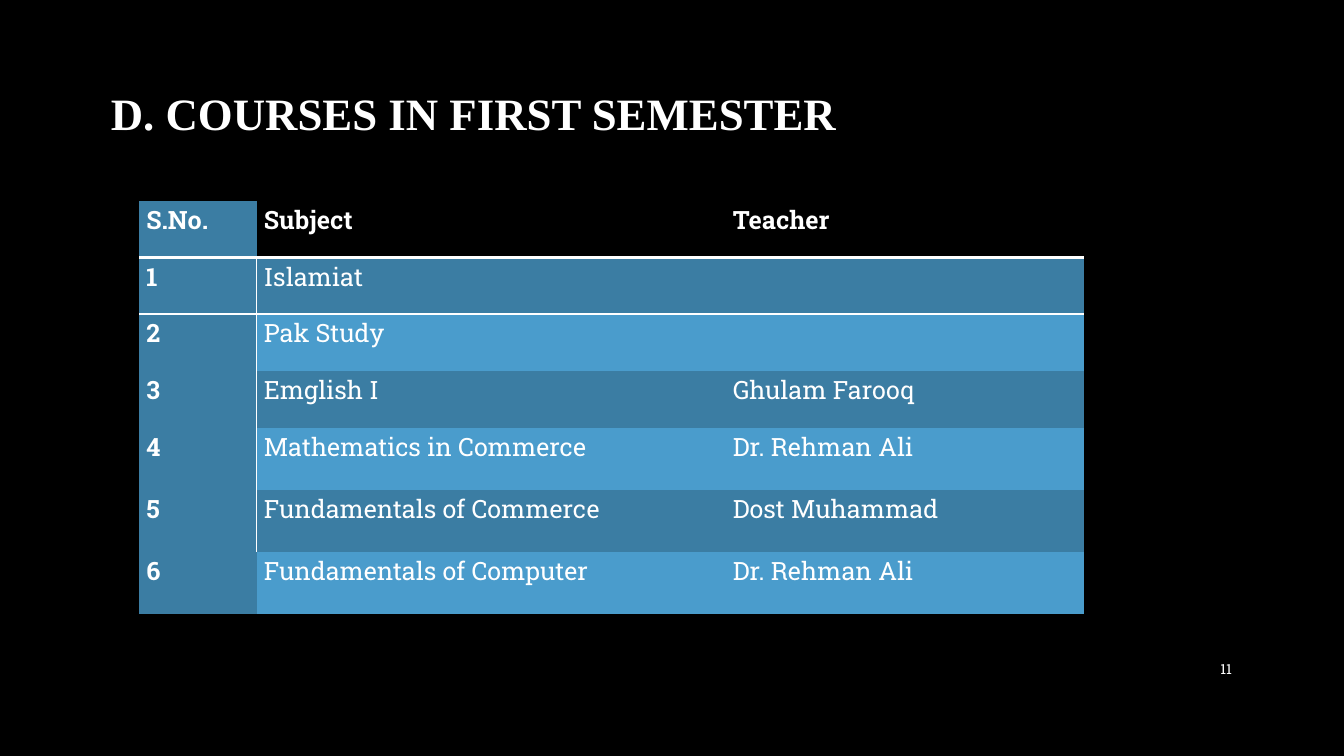
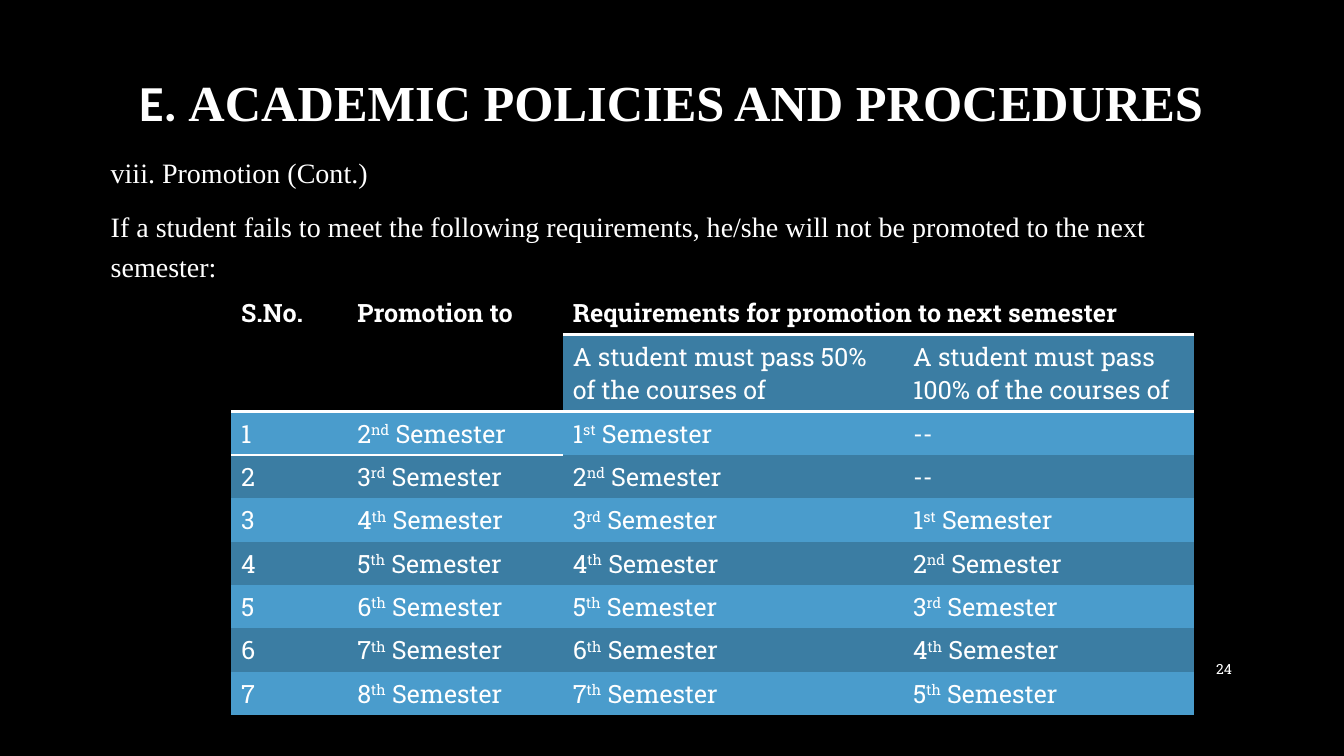
from lxml import etree
from pptx import Presentation
from pptx.dml.color import RGBColor
from pptx.enum import text
from pptx.oxml import ns
from pptx.util import Pt

COLORS = {"black": "000000", "white": "FFFFFF", "dark": "3B7DA3", "light": "4A9CCC"}
SERIF = "Times New Roman"
SLAB = "Roboto Slab"
SUFFIXES = {1: "st", 2: "nd", 3: "rd"}
NO_STYLE = "{2D5ABB26-0587-4C30-8999-92F81FD0307C}"


def add_runs(paragraph, runs, size, font=SLAB, bold=False):
    for content, options in runs:
        run = paragraph.add_run()
        run.text = content
        run.font.size = Pt(size)
        run.font.name = options.get("font", font)
        run.font.bold = bold
        run.font.color.rgb = RGBColor.from_string(COLORS["white"])
        if "baseline" in options:
            run._r.get_or_add_rPr().set("baseline", options["baseline"])


def add_table(slide, left, top, widths, heights):
    frame = slide.shapes.add_table(len(heights), len(widths), Pt(left), Pt(top),
                                   Pt(sum(widths)), Pt(sum(heights)))
    table = frame.table
    table.first_row = table.horz_banding = False
    table._tbl.tblPr.find(ns.qn("a:tableStyleId")).text = NO_STYLE
    for column, width in zip(table.columns, widths):
        column.width = Pt(width)
    for row, height in zip(table.rows, heights):
        row.height = Pt(height)
    return table


presentation = Presentation()
presentation.slide_width = Pt(960)
presentation.slide_height = Pt(540)
background = presentation.slide_master.background.fill
background.solid()
background.fore_color.rgb = RGBColor.from_string(COLORS["black"])

pages = [
    ("11", [("D. COURSES IN FIRST SEMESTER", {})], 32, 62, text.PP_ALIGN.JUSTIFY, 1.07, 8),
    ("24", [("E. ", {"font": "Calibri"}), ("ACADEMIC POLICIES AND PROCEDURES", {})],
     36, 55, text.PP_ALIGN.CENTER, 0.9, 0),
]
slides = []
for number, title_runs, size, height, alignment, spacing, after in pages:
    slide = presentation.slides.add_slide(presentation.slide_layouts[5])
    slides.append(slide)
    title = slide.shapes.title
    title.left, title.top, title.width, title.height = Pt(72), Pt(48), Pt(815), Pt(height)
    title.text_frame.auto_size = text.MSO_AUTO_SIZE.NONE
    title.text_frame.vertical_anchor = text.MSO_ANCHOR.MIDDLE
    paragraph = title.text_frame.paragraphs[0]
    paragraph.alignment = alignment
    paragraph.line_spacing = spacing
    paragraph.space_after = Pt(after)
    add_runs(paragraph, title_runs, size, SERIF, True)

    number_box = slide.shapes.add_textbox(Pt(828), Pt(463), Pt(59), Pt(29))
    number_box.text_frame.word_wrap = True
    number_box.text_frame.vertical_anchor = text.MSO_ANCHOR.MIDDLE
    paragraph = number_box.text_frame.paragraphs[0]
    paragraph.alignment = text.PP_ALIGN.RIGHT
    add_runs(paragraph, [(number, {})], 10)

courses_slide, policies_slide = slides

courses = [
    ("S.No.", "Subject", "Teacher"),
    ("1", "Islamiat", ""),
    ("2", "Pak Study", ""),
    ("3", "Emglish I", "Ghulam Farooq"),
    ("4", "Mathematics in Commerce", "Dr. Rehman Ali"),
    ("5", "Fundamentals of Commerce", "Dost Muhammad"),
    ("6", "Fundamentals of Computer", "Dr. Rehman Ali"),
]
courses_table = add_table(courses_slide, 99.5, 143.5, [84, 335, 256], [40.5] * 4 + [44.5] * 3)
for row, values in enumerate(courses):
    for column, value in enumerate(values):
        cell = courses_table.cell(row, column)
        cell.margin_left = cell.margin_right = Pt(5)
        cell.margin_top = cell.margin_bottom = Pt(0)
        if column == 0:
            color = "dark"
        elif row == 0:
            color = "black"
        else:
            color = "dark" if row % 2 else "light"
        cell.fill.solid()
        cell.fill.fore_color.rgb = RGBColor.from_string(COLORS[color])
        paragraph = cell.text_frame.paragraphs[0]
        paragraph.line_spacing = 1.07
        paragraph.space_after = Pt(8)
        if value:
            add_runs(paragraph, [(value, {})], 18, bold=row == 0 or column == 0)

body = policies_slide.shapes.add_textbox(Pt(72), Pt(102.5), Pt(815), Pt(104))
body.text_frame.word_wrap = True
sentences = [
    "viii. Promotion (Cont.)",
    "If a student fails to meet the following requirements, he/she will not be promoted "
    "to the next semester:",
]
for index, sentence in enumerate(sentences):
    paragraph = body.text_frame.add_paragraph() if index else body.text_frame.paragraphs[0]
    paragraph.line_spacing = 1.2
    paragraph.space_before = Pt(10 if index else 0)
    add_runs(paragraph, [(sentence, {})], 20, SERIF)

promotions = [
    ["S.No.", "Promotion to", "Requirements for promotion to next semester", ""],
    ["", "", "A student must pass 50% of the courses of",
     "A student must pass 100% of the courses of"],
]
for number in range(1, 8):
    promotions.append([str(number), number + 1, number, number - 2 if number > 2 else "--"])

promotions_table = add_table(policies_slide, 165, 208, [83, 154, 243, 208], [31, 55] + [31] * 7)
promotions_table.cell(0, 0).merge(promotions_table.cell(1, 0))
promotions_table.cell(0, 1).merge(promotions_table.cell(1, 1))
promotions_table.cell(0, 2).merge(promotions_table.cell(0, 3))
for row, values in enumerate(promotions):
    for column, value in enumerate(values):
        cell = promotions_table.cell(row, column)
        if row == 0 or (row == 1 and column < 2):
            color = "black"
        else:
            color = "dark" if row % 2 else "light"
        cell.fill.solid()
        cell.fill.fore_color.rgb = RGBColor.from_string(COLORS[color])
        if isinstance(value, int):
            runs = [(str(value), {}), (SUFFIXES.get(value, "th"), {"baseline": "30000"}),
                    (" Semester", {})]
        else:
            runs = [(value, {})] if value else []
        add_runs(cell.text_frame.paragraphs[0], runs, 18, bold=row == 0)

borders = [(courses_table, 1, column, "lnT") for column in range(3)]
borders += [(courses_table, row, 0, "lnR") for row in range(1, 6)]
borders += [(promotions_table, 2, column, "lnT") for column in (0, 1)]
borders += [(promotions_table, 1, column, "lnT") for column in (2, 3)]
for table, row, column, side in borders:
    properties = table.cell(row, column)._tc.get_or_add_tcPr()
    line = etree.Element(ns.qn(f"a:{side}"), w=str(Pt(1 if side == "lnR" else 2)))
    fill = etree.SubElement(line, ns.qn("a:solidFill"))
    etree.SubElement(fill, ns.qn("a:srgbClr"), val=COLORS["white"])
    properties.insert(0, line)

presentation.save("out.pptx")
